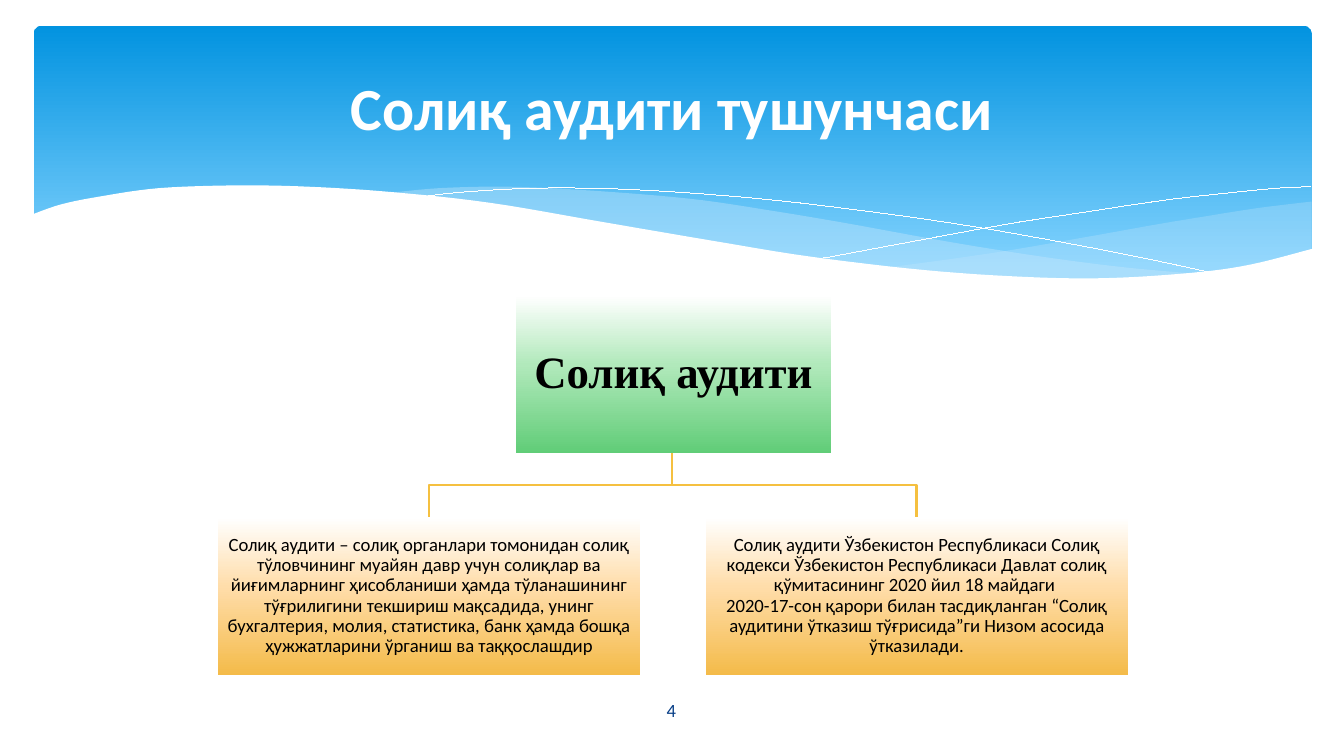
from lxml.etree import SubElement
from pptx import Presentation
from pptx.dml.color import RGBColor
from pptx.enum.shapes import MSO_SHAPE
from pptx.enum.text import MSO_ANCHOR, PP_ALIGN
from pptx.oxml.ns import qn
from pptx.util import Pt

PX = 9144
HAIRLINE = 0.01
COLORS = {
    "white": "FFFFFF", "black": "000000", "number": "073E87",
    "sky": "0293E0", "pale_sky": "83D3FE", "wave": "C6E7FC",
    "pale_green": "B1E9BB", "green": "61CD78",
    "pale_orange": "FFDDAA", "orange": "F4BB4A", "branch": "F5C040",
}
BANNER_STOPS = [(0, "sky"), (90, "pale_sky"), (100, "pale_sky")]
GREEN_STOPS = [(0, "white"), (44, "pale_green"), (100, "green")]
ORANGE_STOPS = [(0, "white"), (44, "pale_orange"), (100, "orange")]

RIGHT_WAVE = [
    [(951, 131), (910, 136), (866, 143), (836, 148), (780, 158), (728, 167), (681, 174), (636, 180)],
    [(636, 180), (680, 184), (732, 187), (789, 189), (829, 188), (872, 184), (910, 177), (951, 166)],
]
MIDDLE_WAVE = [
    [(868, 185), (812, 180), (750, 172), (681, 161), (604, 147), (544, 137), (489, 129),
     (417, 123), (355, 120), (303, 121), (261, 125)],
    [(261, 125), (317, 130), (379, 139), (424, 147), (505, 161), (576, 172), (640, 181),
     (697, 186), (760, 189), (813, 189), (868, 185)],
]
FALLING_LINE = [(284, 128), (319, 124), (376, 121), (444, 122), (531, 128), (611, 137),
                (702, 150), (806, 169), (882, 185)]
RISING_LINE = [(588, 173), (647, 162), (723, 148), (781, 139), (841, 130), (885, 125),
               (926, 121), (950, 120)]
WHITE_WAVE = [
    [(-2, 141), (21, 133), (51, 127), (94, 121), (152, 119), (205, 120), (267, 124), (340, 132),
     (422, 146), (504, 160), (578, 172), (663, 182), (736, 187), (798, 188), (862, 184),
     (905, 178), (952, 166)],
    [(952, 228), (-2, 228)],
]

TITLE = "Солиқ аудити тушунчаси"
ROOT = "Солиқ аудити"
DEFINITION = (
    "Солиқ аудити – солиқ органлари томонидан солиқ тўловчининг муайян давр учун "
    "солиқлар ва йиғимларнинг ҳисобланиши ҳамда тўланашининг тўғрилигини текшириш "
    "мақсадида, унинг бухгалтерия, молия, статистика, банк ҳамда бошқа ҳужжатларини "
    "ўрганиш ва таққослашдир"
)
LEGAL_BASIS = (
    "Солиқ аудити Ўзбекистон Республикаси Солиқ кодекси Ўзбекистон Республикаси "
    "Давлат солиқ қўмитасининг 2020 йил 18 майдаги \v2020-17-сон қарори билан "
    "тасдиқланган “Солиқ аудитини ўтказиш тўғрисида”ги Низом асосида ўтказилади."
)


def color(name):
    """Return the named colour."""
    return RGBColor.from_string(COLORS[name])


def smooth(points, steps=6):
    """Sample a Catmull-Rom curve through the points."""
    if len(points) < 3:
        return points
    padded = [points[0], *points, points[-1]]
    curve = [points[0]]
    for a, b, c, d in zip(padded, padded[1:], padded[2:], padded[3:]):
        for step in range(1, steps + 1):
            t = step / steps
            curve.append(tuple(
                (2 * q + (r - p) * t + (2 * p - 5 * q + 4 * r - s) * t ** 2
                 + (3 * q - p - 3 * r + s) * t ** 3) / 2
                for p, q, r, s in zip(a, b, c, d)))
    return curve


def add_outline(slide, origin, points, close):
    """Draw a freeform through points given relative to an origin."""
    places = [((origin[0] + x) * PX, (origin[1] + y) * PX) for x, y in points]
    builder = slide.shapes.build_freeform(*places[0], scale=1.0)
    builder.add_line_segments(places[1:], close=close)
    shape = builder.convert_to_shape()
    shape.shadow.inherit = False
    return shape


def add_wave(slide, origin, edges, name, opacity=100):
    """Draw a filled wave bounded by smooth edges."""
    points = [point for edge in edges for point in smooth(edge)]
    shape = add_outline(slide, origin, points, True)
    shape.fill.solid()
    shape.fill.fore_color.rgb = color(name)
    shape.line.fill.background()
    if opacity < 100:
        tone = shape._element.spPr.find(qn("a:solidFill"))[0]
        SubElement(tone, qn("a:alpha"), val=str(opacity * 1000))


def add_line(slide, origin, points, name, width):
    """Draw an open line."""
    shape = add_outline(slide, origin, points, False)
    shape.fill.background()
    shape.line.color.rgb = color(name)
    shape.line.width = Pt(width)


def add_gradient_box(slide, box, stops, kind=MSO_SHAPE.RECTANGLE):
    """Draw a shape with a gradient running from top to bottom."""
    shape = slide.shapes.add_shape(kind, *(value * PX for value in box))
    shape.shadow.inherit = False
    shape.line.fill.background()
    shape.fill.gradient()
    shape.fill.gradient_angle = 270
    stop_list = shape._element.spPr.find(qn("a:gradFill")).find(qn("a:gsLst"))
    for stop in list(stop_list):
        stop_list.remove(stop)
    for position, name in stops:
        stop = SubElement(stop_list, qn("a:gs"), pos=str(position * 1000))
        SubElement(stop, qn("a:srgbClr"), val=COLORS[name])
    return shape


def write_text(shape, text, size, name, font="Calibri", bold=False, inset=None, spacing=None):
    """Write one centred paragraph into a shape."""
    frame = shape.text_frame
    frame.word_wrap = True
    frame.vertical_anchor = MSO_ANCHOR.MIDDLE
    if inset is not None:
        frame.margin_left = frame.margin_right = inset * PX
        frame.margin_top = frame.margin_bottom = inset * PX
    paragraph = frame.paragraphs[0]
    paragraph.text = text
    paragraph.alignment = PP_ALIGN.CENTER
    paragraph.line_spacing = spacing
    paragraph.font.name = font
    paragraph.font.size = Pt(size)
    paragraph.font.bold = bold
    paragraph.font.color.rgb = color(name)


def add_label(slide, box, text, size, name, bold=False):
    """Place a text box."""
    shape = slide.shapes.add_textbox(*(value * PX for value in box))
    write_text(shape, text, size, name, bold=bold)


def add_banner(slide, box):
    """Place the blue banner with its waves and title."""
    left, top, width, height = box
    origin = (left, top)
    banner = add_gradient_box(slide, box, BANNER_STOPS, MSO_SHAPE.ROUNDED_RECTANGLE)
    banner.adjustments[0] = 0.03
    add_wave(slide, origin, RIGHT_WAVE, "wave", 29)
    add_wave(slide, origin, MIDDLE_WAVE, "wave", 40)
    for points in (FALLING_LINE, RISING_LINE):
        add_line(slide, origin, smooth(points), "white", HAIRLINE)
    add_wave(slide, origin, WHITE_WAVE, "white")
    add_label(slide, (left + 25, top + 9, 900, 103), TITLE, 32, "white", True)


def add_hierarchy(slide, box):
    """Place the root box, its two children and their branches."""
    left, top, width, height = box
    root_width, child_width, box_height = 234, 314, 117
    middle = width // 2
    child_top = height - box_height
    bend = (box_height + child_top) // 2
    children = [(0, DEFINITION), (width - child_width, LEGAL_BASIS)]
    for child_left, _ in children:
        center = child_left + child_width // 2
        add_line(slide, (left, top),
                 [(middle, box_height), (middle, bend), (center, bend), (center, child_top)],
                 "branch", 1.25)
    root_box = (left + (width - root_width + 1) // 2, top, root_width, box_height)
    root = add_gradient_box(slide, root_box, GREEN_STOPS)
    write_text(root, ROOT, 24, "black", "Times New Roman", True, 2, 0.9)
    for child_left, text in children:
        child_box = (left + child_left, top + child_top, child_width, box_height)
        child = add_gradient_box(slide, child_box, ORANGE_STOPS)
        write_text(child, text, 10, "black", inset=1, spacing=0.9)


def main():
    """Build and save the slide."""
    presentation = Presentation()
    presentation.slide_width = 1000 * PX
    presentation.slide_height = presentation.slide_width * 9 // 16
    slide = presentation.slides.add_slide(presentation.slide_layouts[6])
    add_banner(slide, (25, 19, 951, 202))
    add_hierarchy(slide, (162, 220, 677, 282))
    add_label(slide, (436, 513, 127, 30), "4", 10, "number")
    presentation.save("out.pptx")


if __name__ == "__main__":
    main()
